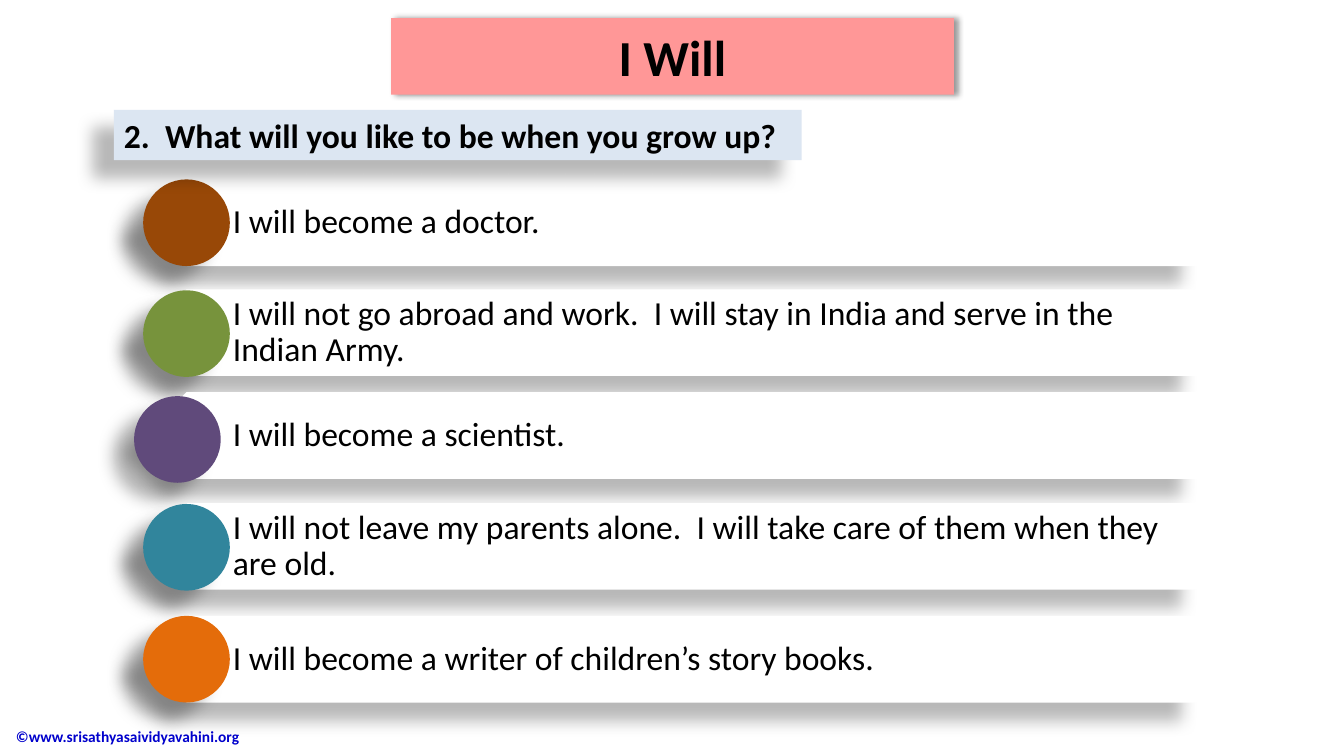
"""Build the "I Will" slide: a title, a question and five answers with coloured dots."""
from dataclasses import dataclass

from lxml.etree import SubElement
from pptx import Presentation
from pptx.dml.color import RGBColor
from pptx.enum.shapes import MSO_SHAPE
from pptx.enum.text import MSO_ANCHOR, MSO_AUTO_SIZE, PP_ALIGN
from pptx.oxml.ns import qn
from pptx.util import Inches, Pt

HEADING = "I Will"
QUESTION = "2.  What will you like to be when you grow up?"
COPYRIGHT = "©www.srisathyasaividyavahini.org"
ANSWERS = [
    ("I will become a doctor.", "984807", 17.8, (14.2, 17.8)),
    ("I will not go abroad and work.  I will stay in India and serve in the Indian Army.",
     "77933C", 28.7, (14.2, 28.8)),
    ("I will become a scientist.", "604A7B", 38.9, (13.3, 39.3)),
    ("I will not leave my parents alone.  I will take care of them when they are old.",
     "31859C", 49.9, (14.2, 50)),
    ("I will become a writer of children’s story books.", "E46C0A", 61.1, (14.2, 61.1)),
]

COLUMNS, ROWS = 133.3, 75
HEADING_AREA = (38.8, 1.8, 55.8, 7.6)
QUESTION_AREA = (11.3, 10.9, 68.2, 5)
COPYRIGHT_AREA = (0.6, 71, 35.3, 4.1)
BAND_LEFT, BAND_WIDTH = 14.2, 105
TEXT_LEFT, TEXT_WIDTH = 23.1, 94.2
BAND_HEIGHT = 8.6


@dataclass(frozen=True)
class Theme:
    """Colours, type sizes and shadows of the slide."""
    font: str = "Calibri"
    ink: str = "000000"
    heading_fill: str = "FF9797"
    question_fill: str = "DCE6F2"
    band_fill: str = "FFFFFF"
    copyright_ink: str = "0000CC"
    heading_size: int = 36
    text_size: int = 24
    copyright_size: int = 11
    deep_shadow: tuple = (28, 11.8, 19.7, 141)
    soft_shadow: tuple = (40, 4, 3, 0)


THEME = Theme()


def cells(*counts):
    return [Inches(count / 10) for count in counts]


def paint(shape, colour, shadow):
    shape.fill.solid()
    shape.fill.fore_color.rgb = RGBColor.from_string(colour)
    shape.line.fill.background()
    shape.shadow.inherit = False
    opacity, blur, distance, angle = shadow
    effects = shape._element.spPr.find(qn("a:effectLst"))
    outer = SubElement(effects, qn("a:outerShdw"), blurRad=str(Pt(blur)),
                       dist=str(Pt(distance)), dir=str(angle * 60000),
                       algn="ctr", rotWithShape="0")
    shade = SubElement(outer, qn("a:srgbClr"), val=THEME.ink)
    SubElement(shade, qn("a:alpha"), val=str(opacity * 1000))


def write(shape, words, size, colour=THEME.ink, bold=False, align=PP_ALIGN.LEFT):
    frame = shape.text_frame
    frame.word_wrap = True
    frame.auto_size = MSO_AUTO_SIZE.NONE
    frame.vertical_anchor = MSO_ANCHOR.MIDDLE
    paragraph = frame.paragraphs[0]
    paragraph.alignment = align
    run = paragraph.add_run()
    run.text = words
    run.font.name = THEME.font
    run.font.size = Pt(size)
    run.font.bold = bold
    run.font.color.rgb = RGBColor.from_string(colour)
    return frame


def add_heading(slide):
    heading = slide.shapes.title
    heading.left, heading.top, heading.width, heading.height = cells(*HEADING_AREA)
    outline = SubElement(heading._element.spPr, qn("a:prstGeom"), prst="roundRect")
    guides = SubElement(outline, qn("a:avLst"))
    SubElement(guides, qn("a:gd"), name="adj", fmla="val 50000")
    paint(heading, THEME.heading_fill, THEME.soft_shadow)
    write(heading, HEADING, THEME.heading_size, bold=True, align=PP_ALIGN.CENTER)


def add_answer(slide, words, colour, top, dot_corner):
    shapes = slide.shapes
    band = shapes.add_shape(MSO_SHAPE.PENTAGON,
                            *cells(BAND_LEFT, top, BAND_WIDTH, BAND_HEIGHT))
    band.rotation = 180
    paint(band, THEME.band_fill, THEME.deep_shadow)
    answer = shapes.add_textbox(*cells(TEXT_LEFT, top, TEXT_WIDTH, BAND_HEIGHT))
    frame = write(answer, words, THEME.text_size)
    frame.margin_left = frame.margin_right = 0
    frame.paragraphs[0].line_spacing = 0.9
    dot = shapes.add_shape(MSO_SHAPE.OVAL, *cells(*dot_corner, BAND_HEIGHT, BAND_HEIGHT))
    paint(dot, colour, THEME.deep_shadow)


def main():
    deck = Presentation()
    deck.slide_width, deck.slide_height = cells(COLUMNS, ROWS)
    slide = deck.slides.add_slide(deck.slide_layouts.get_by_name("Title Only"))
    add_heading(slide)
    notice = slide.shapes.add_textbox(*cells(*COPYRIGHT_AREA))
    write(notice, COPYRIGHT, THEME.copyright_size, THEME.copyright_ink, bold=True)
    for answer in ANSWERS:
        add_answer(slide, *answer)
    question = slide.shapes.add_shape(MSO_SHAPE.RECTANGLE, *cells(*QUESTION_AREA))
    paint(question, THEME.question_fill, THEME.deep_shadow)
    write(question, QUESTION, THEME.text_size, bold=True)
    deck.save("out.pptx")


if __name__ == "__main__":
    main()
